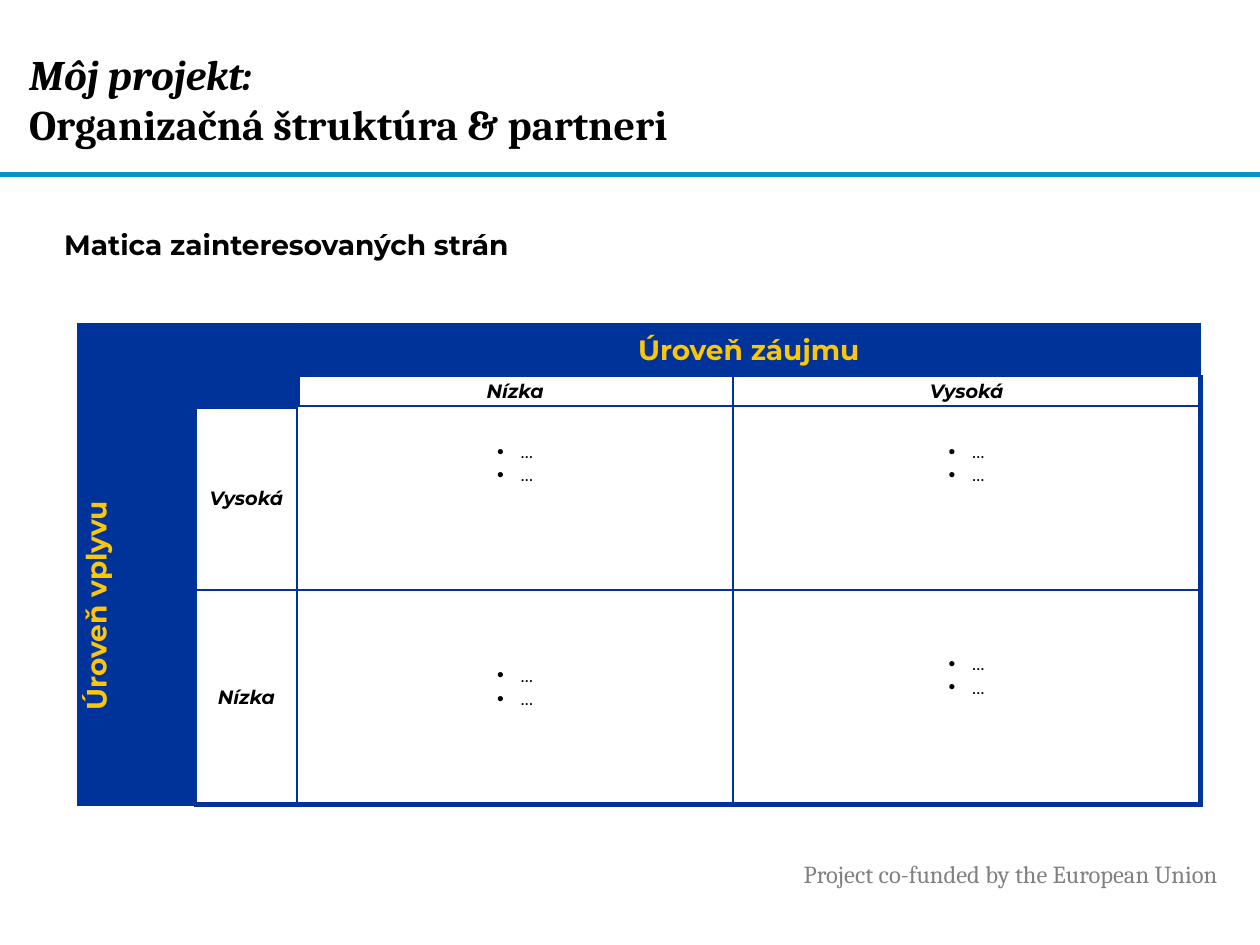
"""Build a slide with a stakeholder matrix of interest and influence."""
from lxml.etree import SubElement
from pptx import Presentation
from pptx.dml.color import RGBColor
from pptx.enum.shapes import MSO_SHAPE
from pptx.enum.text import MSO_ANCHOR, PP_ALIGN
from pptx.oxml import parse_xml
from pptx.oxml.ns import nsdecls, qn
from pptx.util import Pt

BLUE, GOLD, BLACK = "003399", "FDC608", "000000"
SERIF, SANS = "Cambria", "Montserrat"
TITLE = [("Môj projekt:", True), ("Organizačná štruktúra & partneri", False)]
HEAD = "Matica zainteresovaných strán"
FOOT = "Project co-funded by the European Union"
AXES = {(0, 2): "Úroveň záujmu", (2, 0): "Úroveň vplyvu"}
LEVELS = {(1, 2): "Nízka", (1, 3): "Vysoká", (2, 1): "Vysoká", (3, 1): "Nízka"}
LISTS = {(2, 2): 40, (2, 3): 40, (3, 2): 12, (3, 3): 25}
ITEMS = ["…", "…"]
SPANS = [((0, 0), (0, 1)), ((0, 2), (0, 3)), ((1, 0), (1, 1)), ((2, 0), (3, 0))]
COLS = [66.3, 58.2, 249, 267]
ROWS = [29, 17.4, 105, 122.6]


def color(code):
    return RGBColor.from_string(code)


def write(para, text, size=11, font=SANS, code=BLACK, bold=False, slant=False):
    run = para.add_run()
    run.text = text
    face = run.font
    face.size, face.name, face.bold, face.italic = Pt(size), font, bold, slant
    face.color.rgb = color(code)


def add_box(slide, left, top, width, height, pad=(0, 0), anchor=MSO_ANCHOR.TOP):
    box = slide.shapes.add_textbox(Pt(left), Pt(top), Pt(width), Pt(height))
    frame = box.text_frame
    frame.word_wrap, frame.vertical_anchor = True, anchor
    frame.margin_left = frame.margin_right = Pt(pad[0])
    frame.margin_top = frame.margin_bottom = Pt(pad[1])
    return frame.paragraphs[0]


def add_edges(cell, row, col):
    heavy = {
        "L": col == 0 or (col == 2 and row < 2),
        "R": col == 3 or (col == 1 and row < 2),
        "T": row == 0 or (row, col) == (2, 1),
        "B": row == 3,
    }
    props = cell._tc.get_or_add_tcPr()
    for spot, (side, thick) in enumerate(heavy.items()):
        width = Pt(3 if thick else 1.5)
        props.insert(spot, parse_xml(
            f'<a:ln{side} {nsdecls("a")} w="{width}"><a:solidFill>'
            f'<a:srgbClr val="{BLUE}"/></a:solidFill></a:ln{side}>'))


def add_list(frame):
    for spot, item in enumerate(ITEMS):
        para = frame.add_paragraph() if spot else frame.paragraphs[0]
        para.alignment = PP_ALIGN.CENTER
        props = para._p.get_or_add_pPr()
        props.set("marL", str(Pt(13.5)))
        props.set("indent", str(-Pt(13.5)))
        SubElement(props, qn("a:buFont")).set("typeface", "Arial")
        SubElement(props, qn("a:buChar")).set("char", "•")
        write(para, item)


def fill_cell(cell, row, col):
    key = row, col
    if row == 0 or col == 0 or key == (1, 1):
        cell.fill.solid()
        cell.fill.fore_color.rgb = color(BLUE)
    else:
        cell.fill.background()
    cell.vertical_anchor = MSO_ANCHOR.MIDDLE
    cell.margin_left = cell.margin_right = Pt(4.3)
    cell.margin_top = cell.margin_bottom = 0
    para = cell.text_frame.paragraphs[0]
    para.alignment = PP_ALIGN.CENTER
    if key in AXES:
        write(para, AXES[key], size=16, code=GOLD, bold=True)
    elif key in LEVELS:
        write(para, LEVELS[key], bold=True, slant=True)
    elif key in LISTS:
        cell.margin_bottom = Pt(LISTS[key])
        add_list(cell.text_frame)
    else:
        para.font.size = Pt(11)
    if key == (2, 0):
        cell.vertical_anchor = MSO_ANCHOR.TOP
        cell._tc.get_or_add_tcPr().set("vert", "vert270")
    add_edges(cell, row, col)


def add_grid(slide):
    shape = slide.shapes.add_table(
        len(ROWS), len(COLS), Pt(45.4), Pt(185.8), Pt(sum(COLS)), Pt(sum(ROWS)))
    grid = shape.table
    grid.first_row = grid.horz_banding = False
    for col, width in zip(grid.columns, COLS):
        col.width = Pt(width)
    for row, height in zip(grid.rows, ROWS):
        row.height = Pt(height)
    for row in range(len(ROWS)):
        for col in range(len(COLS)):
            fill_cell(grid.cell(row, col), row, col)
    for first, last in SPANS:
        grid.cell(*first).merge(grid.cell(*last))


def main():
    deck = Presentation()
    deck.slide_width, deck.slide_height = Pt(720), Pt(540)
    slide = deck.slides.add_slide(deck.slide_layouts[6])

    rule = slide.shapes.add_shape(
        MSO_SHAPE.RECTANGLE, 0, Pt(98.6), Pt(720), Pt(2.2))
    rule.shadow.inherit = False
    rule.fill.solid()
    rule.fill.fore_color.rgb = color("0C94B7")
    rule.line.color.rgb = color("0096D3")
    rule.line.width = Pt(1)

    foot = add_box(slide, 452.2, 487.4, 263.5, 24.5, pad=(7.2, 3.6))
    write(foot, FOOT, size=14, font=SERIF, code="808080")
    head = add_box(slide, 36.7, 126.7, 611.3, 364.3, pad=(0, 3.6))
    write(head, HEAD, size=16, bold=True)
    add_grid(slide)

    title = add_box(slide, 16.6, 13.7, 523.4, 85.7, anchor=MSO_ANCHOR.MIDDLE)
    for spot, (text, slant) in enumerate(TITLE):
        if spot:
            title.add_line_break()
        write(title, text, size=24, font=SERIF, bold=True, slant=slant)
    deck.save("out.pptx")


if __name__ == "__main__":
    main()
